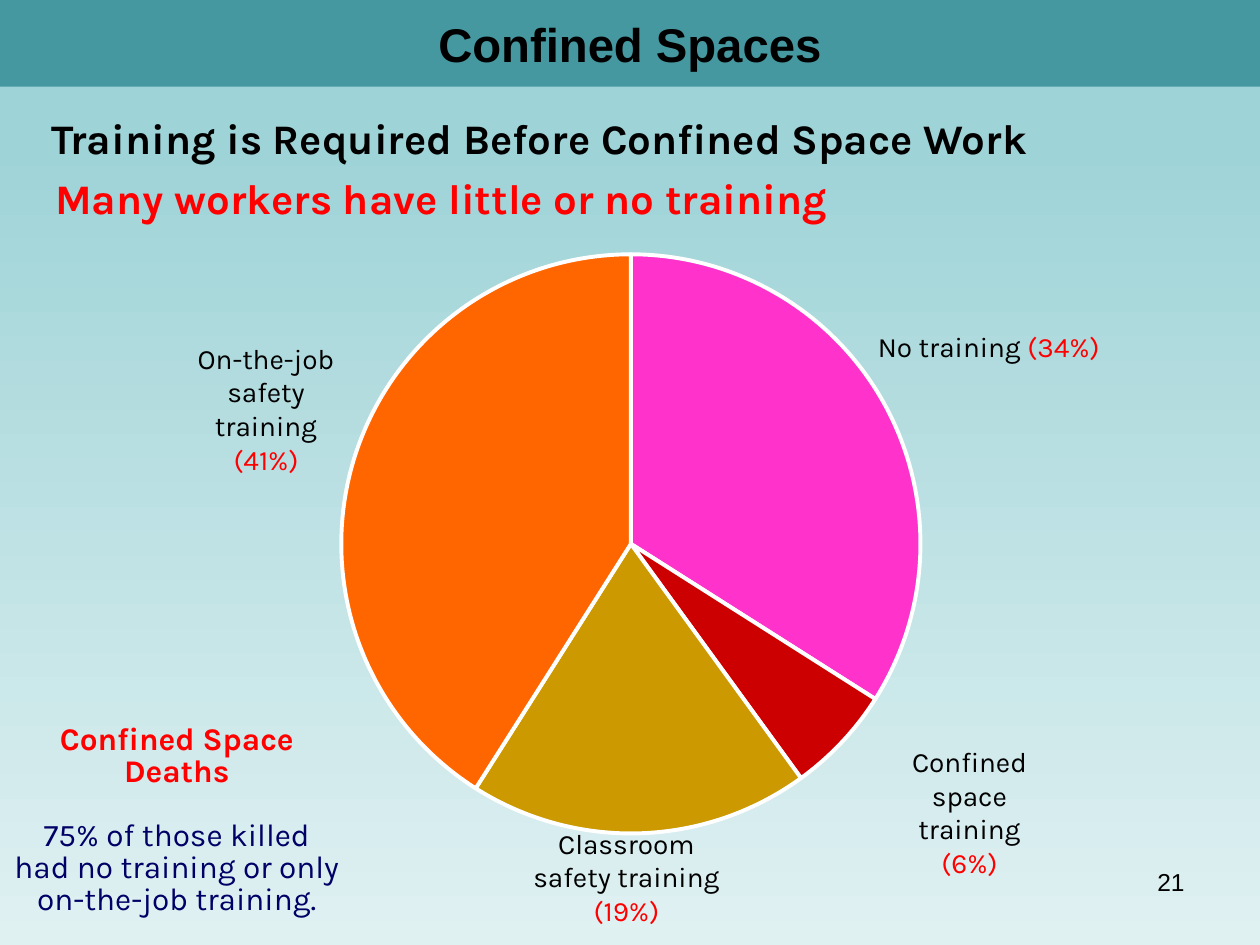
import pptx
import pptx.chart.data
import pptx.dml.color
import pptx.enum.chart
import pptx.enum.dml
import pptx.enum.text
import pptx.oxml
import pptx.oxml.ns
import pptx.util

Pt = pptx.util.Pt
RGBColor = pptx.dml.color.RGBColor
PP_ALIGN = pptx.enum.text.PP_ALIGN
MSO_ANCHOR = pptx.enum.text.MSO_ANCHOR

BLACK = RGBColor(0x00, 0x00, 0x00)
WHITE = RGBColor(0xFF, 0xFF, 0xFF)
RED = RGBColor(0xFF, 0x00, 0x00)
NAVY = RGBColor(0x00, 0x00, 0x66)
TEAL = RGBColor(0x45, 0x97, 0xA0)
SKY_TOP = RGBColor(0x9E, 0xD3, 0xD7)
SKY_BOTTOM = RGBColor(0xE0, 0xF1, 0xF2)
PINK = RGBColor(0xFF, 0x33, 0xCC)
CRIMSON = RGBColor(0xCC, 0x00, 0x00)
GOLD = RGBColor(0xCC, 0x99, 0x00)
ORANGE = RGBColor(0xFF, 0x66, 0x00)


class SlideBuilder:
    """Holds the style and the current slide; all lengths are in points."""

    head_font = "Arial"
    body_font = "Karla"

    def __init__(self, prs):
        self.s = prs.slides.add_slide(prs.slide_layouts[5])

    def background(self, *stops):
        fill = self.s.background.fill
        fill.gradient()
        fill.gradient_angle = 270
        for stop, (position, color) in zip(fill.gradient_stops, stops):
            stop.position = position
            stop.color.rgb = color

    def run(self, p, text, size, color, bold=False, font=None):
        r = p.add_run()
        r.text = text
        r.font.name = font or self.body_font
        r.font.size = Pt(size)
        r.font.bold = bold
        r.font.color.rgb = color

    def title(self, text, width, height):
        sp = self.s.shapes.title
        sp.left, sp.top, sp.width, sp.height = Pt(0), Pt(0), Pt(width), Pt(height)
        sp.fill.solid()
        sp.fill.fore_color.rgb = TEAL
        tf = sp.text_frame
        tf.vertical_anchor = MSO_ANCHOR.MIDDLE
        p = tf.paragraphs[0]
        p.alignment = PP_ALIGN.CENTER
        self.run(p, text, 27, BLACK, True, self.head_font)

    def text(self, box, paragraphs, size, align=PP_ALIGN.CENTER, bold=False,
             font=None, spacing=None, gap=0, anchor=MSO_ANCHOR.TOP, inset=7.2):
        """Each paragraph is a list of (text, color) or (text, color, bold) runs."""
        tf = self.s.shapes.add_textbox(*map(Pt, box)).text_frame
        tf.word_wrap = True
        tf.vertical_anchor = anchor
        tf.margin_left = tf.margin_right = Pt(inset)
        for i, runs in enumerate(paragraphs):
            p = tf.add_paragraph() if i else tf.paragraphs[0]
            p.alignment = align
            p.line_spacing = spacing
            if i and gap:
                p.space_before = Pt(gap)
            for text, color, *weight in runs:
                self.run(p, text, size, color, weight[0] if weight else bold, font)

    def pie(self, box, diameter, slices):
        data = pptx.chart.data.CategoryChartData()
        data.categories = [str(i + 1) for i in range(len(slices))]
        data.add_series("Series 1", [value for value, _ in slices])
        chart = self.s.shapes.add_chart(
            pptx.enum.chart.XL_CHART_TYPE.PIE, *map(Pt, box), data).chart
        chart.has_legend = False
        chart.has_title = False
        chart.font.name = self.head_font
        chart.font.size = Pt(10)
        chart.font.color.rgb = BLACK
        for i, (_, color) in enumerate(slices):
            fmt = chart.plots[0].series[0].points[i].format
            fmt.fill.solid()
            fmt.fill.fore_color.rgb = color
            fmt.line.color.rgb = WHITE
            fmt.line.width = Pt(2.25)
        # Centre the pie in its frame at the given diameter
        w, h = diameter / box[2], diameter / box[3]
        values = {"x": (1 - w) / 2, "y": (1 - h) / 2, "w": w, "h": h}
        parts = "".join(f'<c:{k} val="{v:.3f}"/>' for k, v in values.items())
        area = chart.plots[0]._element.getparent()
        for old in area.findall(pptx.oxml.ns.qn("c:layout")):
            area.remove(old)
        area.insert(0, pptx.oxml.parse_xml(
            f'<c:layout {pptx.oxml.ns.nsdecls("c")}><c:manualLayout>'
            '<c:layoutTarget val="inner"/><c:xMode val="edge"/><c:yMode val="edge"/>'
            f'{parts}</c:manualLayout></c:layout>'))


def main():
    prs = pptx.Presentation()
    prs.slide_width, prs.slide_height = Pt(720), Pt(540)
    b = SlideBuilder(prs)

    # Background, title bar and page number
    b.background((0.15, SKY_TOP), (1.0, SKY_BOTTOM))
    b.title("Confined Spaces", 720, 49.5)
    b.text((516, 492, 168, 37), [[("21", BLACK)]], 14, PP_ALIGN.RIGHT,
           font=b.head_font)

    # Headlines
    b.text((24.5, 60.5, 605, 50),
           [[("Training is Required Before Confined Space Work", BLACK)]],
           24, PP_ALIGN.LEFT, bold=True, inset=5)
    b.text((24.5, 99.5, 580, 32),
           [[("Many workers have little or no training", RED)]],
           24, PP_ALIGN.LEFT, bold=True, spacing=0.85)

    # Pie of training received
    b.pie((168, 135.5, 385, 351), 331,
          [(34, PINK), (6, CRIMSON), (19, GOLD), (41, ORANGE)])

    # Slice labels
    b.text((494.5, 185, 148, 27), [[("No training ", BLACK), ("(34%)", RED)]],
           16, PP_ALIGN.LEFT)
    for box, lines, share in [
        ((100, 191.5, 104, 85), ("On-the-job", "safety training"), "(41%)"),
        ((492.5, 422, 123, 65.5), ("Confined space", "training"), "(6%)"),
        ((293, 468.5, 130, 65.5), ("Classroom", "safety training"), "(19%)"),
    ]:
        b.text(box, [[(line, BLACK)] for line in lines] + [[(share, RED)]], 16)

    # Deaths note
    b.text((0.5, 409.5, 201, 119),
           [[("Confined Space Deaths", RED, True)],
            [("75% of those killed had no training or only on-the-job training.",
              NAVY)]],
           18, spacing=0.85, gap=18, anchor=MSO_ANCHOR.MIDDLE)

    prs.save("out.pptx")


if __name__ == "__main__":
    main()
